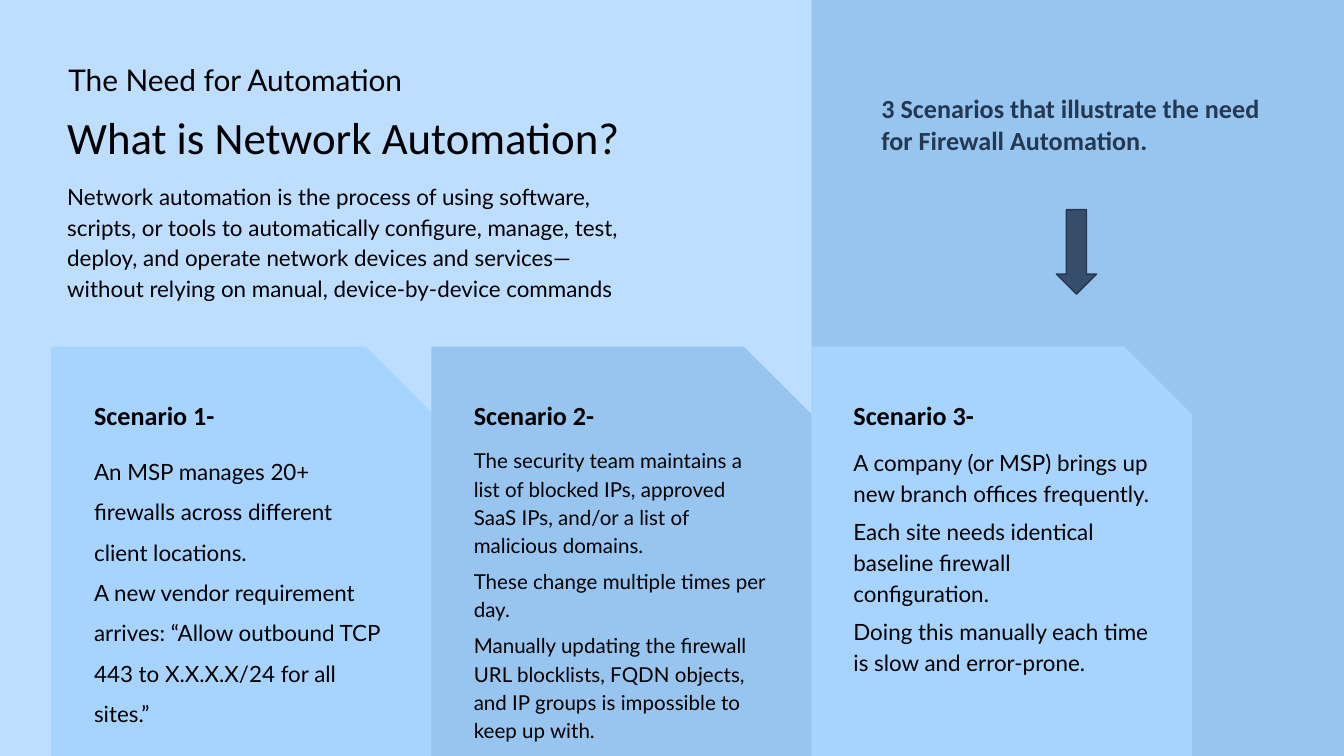
import pptx
import pptx.util
import pptx.dml.color
import pptx.enum.shapes
import pptx.enum.text

Inches = pptx.util.Inches
Pt = pptx.util.Pt
RGBColor = pptx.dml.color.RGBColor
Shape = pptx.enum.shapes.MSO_SHAPE

theme = {
    "pale": RGBColor.from_string("BEDEFF"),
    "light": RGBColor.from_string("A7D4FF"),
    "medium": RGBColor.from_string("97C5EF"),
    "slate": RGBColor.from_string("364D6C"),
    "navy": RGBColor.from_string("253851"),
    "black": RGBColor.from_string("000000"),
    "title": Pt(24),
    "subtitle": Pt(16),
    "heading": Pt(14),
    "body": Pt(12),
    "small": Pt(11),
}


def add_panel(slide, kind, box, color, adjustments=()):
    shape = slide.shapes.add_shape(kind, *map(Inches, box))
    shape.shadow.inherit = False
    shape.fill.solid()
    shape.fill.fore_color.rgb = theme[color]
    shape.line.fill.background()
    for index, value in enumerate(adjustments):
        shape.adjustments[index] = value
    return shape


def add_text(slide, box, lines, size, font="Lato", color="black", bold=False,
             spacing=None, before=0, margins=(0, 0, 0.1, 0)):
    frame = slide.shapes.add_textbox(*map(Inches, box)).text_frame
    left, top, right, bottom = map(Inches, margins)
    frame_format = {
        "word_wrap": True,
        "vertical_anchor": pptx.enum.text.MSO_ANCHOR.TOP,
        "margin_left": left,
        "margin_top": top,
        "margin_right": right,
        "margin_bottom": bottom,
    }
    for name, value in frame_format.items():
        setattr(frame, name, value)
    font_format = {"name": font, "size": theme[size], "bold": bold}
    for index, line in enumerate(lines):
        paragraph = frame.add_paragraph() if index else frame.paragraphs[0]
        paragraph.line_spacing = spacing
        paragraph.space_before = Pt(before)
        run = paragraph.add_run()
        run.text = line
        run.font.color.rgb = theme[color]
        for name, value in font_format.items():
            setattr(run.font, name, value)


presentation = pptx.Presentation()
presentation.slide_width = Inches(10)
presentation.slide_height = Inches(10) * 9 // 16
slide = presentation.slides.add_slide(presentation.slide_layouts[6])
slide.background.fill.solid()
slide.background.fill.fore_color.rgb = theme["medium"]

backdrop = add_panel(slide, Shape.RECTANGLE, (0, 0, 6.04, 5.62), "pale")
backdrop.height = presentation.slide_height

add_text(slide, (0.51, 0.46, 5.84, 0.63), ["The Need for Automation"], "subtitle")
add_text(slide, (0.5, 0.86, 5.08, 0.48), ["What is Network Automation?"], "title",
         font="Calibri", spacing=0.9)
add_text(slide, (0.5, 1.33, 4.35, 1.15), [
    "Network automation is the process of using software, scripts, or tools to "
    "automatically configure, manage, test, deploy, and operate network devices "
    "and services—without relying on manual, device-by-device commands",
], "body", spacing=1.15)

scenarios = [
    ("light", 2.85, {"size": "body", "spacing": 1.5}, [
        "An MSP manages 20+ firewalls across different client locations.",
        "A new vendor requirement arrives: “Allow outbound TCP 443 to X.X.X.X/24 "
        "for all sites.”",
    ]),
    ("medium", 2.83, {"size": "small", "spacing": 1.15, "before": 4}, [
        "The security team maintains a list of blocked IPs, approved SaaS IPs, "
        "and/or a list of malicious domains.",
        "These change multiple times per day.",
        "Manually updating the firewall URL blocklists, FQDN objects, and IP groups "
        "is impossible to keep up with.",
    ]),
    ("light", 2.83, {"size": "body", "spacing": 1.15, "before": 4}, [
        "A company (or MSP) brings up new branch offices frequently.",
        "Each site needs identical baseline firewall configuration.",
        "Doing this manually each time is slow and error-prone.",
    ]),
]
for index, (color, width, text_format, lines) in enumerate(scenarios):
    card_left = 0.38 + 2.83 * index
    text_left = 0.7 + 5.65 * index / 2
    add_panel(slide, Shape.SNIP_1_RECTANGLE, (card_left, 2.58, width, 3.05), color, [0.178])
    add_text(slide, (text_left, 2.97, 2.11, 0.34), [f"Scenario {index + 1}-"], "heading",
             font="Calibri", bold=True)
    add_text(slide, (text_left, 3.31, 2.31, 1.97), lines, **text_format)

add_text(slide, (6.46, 0.59, 3.11, 0.67),
         ["3 Scenarios that illustrate the need for Firewall Automation."], "heading",
         font="Calibri", color="navy", bold=True, margins=(0.1, 0.1, 0.1, 0.1))
arrow = add_panel(slide, Shape.DOWN_ARROW, (7.86, 1.56, 0.3, 0.63), "slate", [0.5, 0.5])
arrow.line.color.rgb = theme["navy"]
arrow.line.width = Pt(0.75)

presentation.save("out.pptx")
